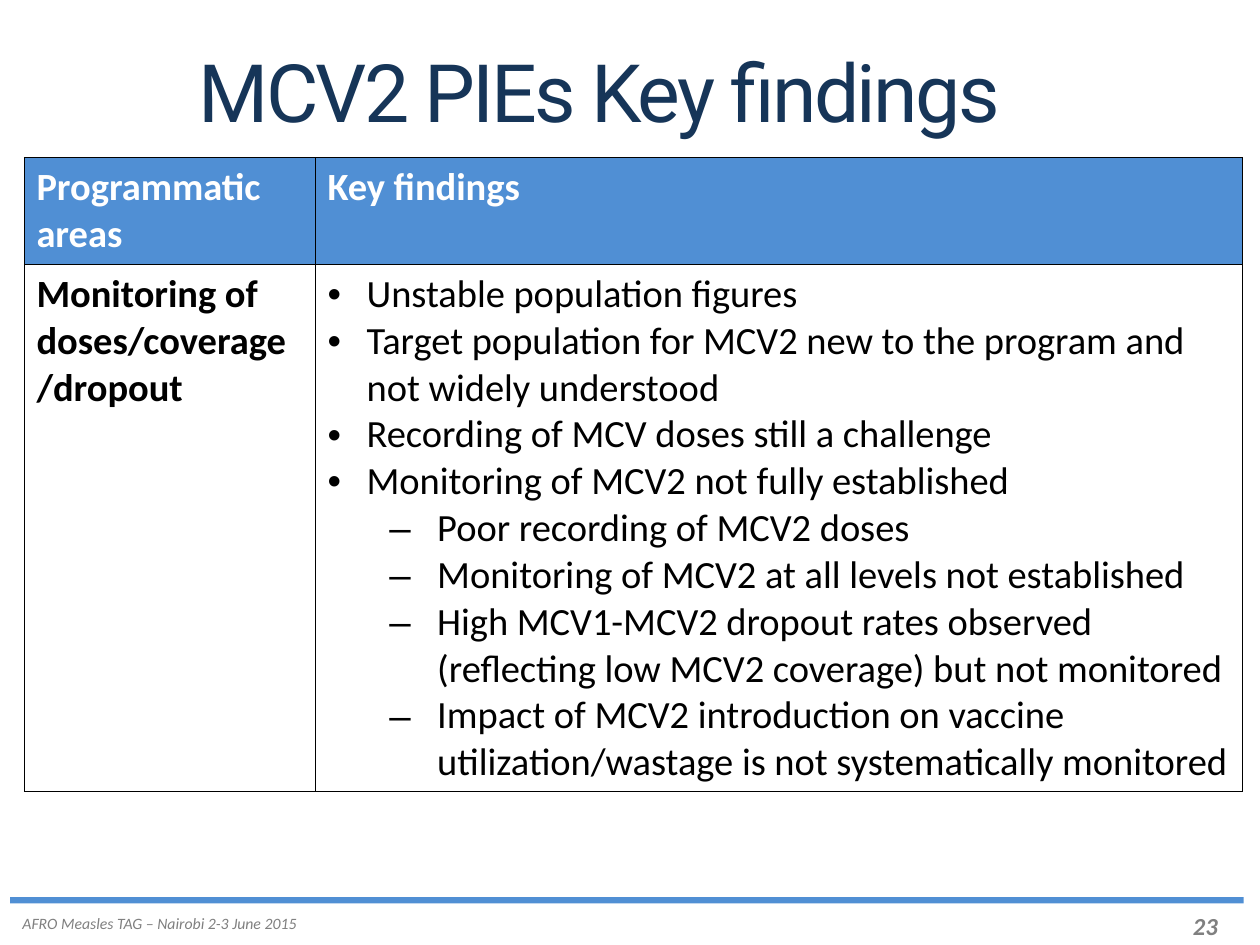
import pptx
import pptx.util
import pptx.dml.color
import pptx.enum.shapes
import pptx.enum.text
import pptx.oxml
import pptx.oxml.ns
from pptx.util import Inches

COLORS = {"blue": "508FD4", "navy": "163558", "grey": "808080",
          "white": "FFFFFF", "black": "000000"}

HEADERS = ["Programmatic areas", "Key findings"]
AREA = "Monitoring of doses/coverage/dropout"
FINDINGS = [
    (0, "Unstable population figures"),
    (0, "Target population for MCV2 new to the program and not widely understood"),
    (0, "Recording of MCV doses still a challenge"),
    (0, "Monitoring of MCV2 not fully established"),
    (1, "Poor recording of MCV2 doses"),
    (1, "Monitoring of MCV2 at all levels not established"),
    (1, "High MCV1-MCV2 dropout rates observed (reflecting low MCV2 coverage) but not monitored"),
    (1, "Impact of MCV2 introduction on vaccine utilization/wastage is not systematically monitored"),
]
BULLETS = [("•", 0.31, 0.31), ("‒", 0.87, 0.38)]


def rgb(name):
    """Return the named colour."""
    return pptx.dml.color.RGBColor.from_string(COLORS[name])


def add_run(p, text, size, color, bold=False, italic=False, font="Calibri"):
    """Add a formatted run to a paragraph."""
    r = p.add_run()
    r.text = text
    r.font.name = font
    r.font.size = pptx.util.Pt(size)
    r.font.bold = bold
    r.font.italic = italic
    r.font.color.rgb = rgb(color)
    return r


def add_title(s, text):
    """Place and fill the title placeholder."""
    sp = s.shapes.title
    sp.left, sp.top = Inches(0.17), Inches(0.42)
    sp.width, sp.height = Inches(9.17), Inches(0.72)
    tf = sp.text_frame
    tf.margin_left = tf.margin_right = tf.margin_top = tf.margin_bottom = 0
    tf.vertical_anchor = pptx.enum.text.MSO_ANCHOR.TOP
    tf.auto_size = pptx.enum.text.MSO_AUTO_SIZE.NONE
    p = tf.paragraphs[0]
    p.alignment = pptx.enum.text.PP_ALIGN.CENTER
    p.line_spacing = 0.9
    r = add_run(p, text, 46, "navy", font="Roboto")
    r._r.get_or_add_rPr().set("spc", "-150")


def add_footer_text(s, text, left, top, width, height, size, bold=False):
    """Add an italic grey footer text."""
    sp = s.shapes.add_textbox(Inches(left), Inches(top), Inches(width), Inches(height))
    tf = sp.text_frame
    tf.word_wrap = False
    add_run(tf.paragraphs[0], text, size, "grey", bold, italic=True)


def add_rule(s):
    """Add the blue bar above the footer."""
    sp = s.shapes.add_shape(pptx.enum.shapes.MSO_SHAPE.RECTANGLE,
                            Inches(0.08), Inches(7.12), Inches(9.79), Inches(0.05))
    sp.shadow.inherit = False
    sp.fill.solid()
    sp.fill.fore_color.rgb = rgb("blue")
    sp.line.fill.background()


def format_cell(cell, fill):
    """Fill a cell and give it thin black borders."""
    cell.fill.solid()
    cell.fill.fore_color.rgb = rgb(fill)
    tcPr = cell._tc.get_or_add_tcPr()
    for i, side in enumerate(("lnL", "lnR", "lnT", "lnB")):
        tcPr.insert(i, pptx.oxml.parse_xml(
            f'<a:{side} {pptx.oxml.ns.nsdecls("a")} w="3175"><a:solidFill>'
            f'<a:srgbClr val="{COLORS["black"]}"/></a:solidFill></a:{side}>'))


def add_bullet(p, level):
    """Give a paragraph the bullet and hanging indent of its level."""
    char, left, hang = BULLETS[level]
    p.level = level
    pPr = p._p.get_or_add_pPr()
    pPr.set("marL", str(Inches(left)))
    pPr.set("indent", str(-Inches(hang)))
    pPr.append(pptx.oxml.parse_xml(
        f'<a:buFont {pptx.oxml.ns.nsdecls("a")} typeface="Arial"/>'))
    pPr.append(pptx.oxml.parse_xml(
        f'<a:buChar {pptx.oxml.ns.nsdecls("a")} char="{char}"/>'))


def add_findings_table(s):
    """Add the table of programmatic areas and findings."""
    widths, heights = (2.31, 7.36), (0.85, 4.18)
    tbl = s.shapes.add_table(2, 2, Inches(0.19), Inches(1.25),
                             Inches(sum(widths)), Inches(sum(heights))).table
    for col, width in zip(tbl.columns, widths):
        col.width = Inches(width)
    for row, height, fill in zip(tbl.rows, heights, ("blue", "white")):
        row.height = Inches(height)
        for cell in row.cells:
            format_cell(cell, fill)
    for i, text in enumerate(HEADERS):
        add_run(tbl.cell(0, i).text_frame.paragraphs[0], text, 22, "white", True)
    add_run(tbl.cell(1, 0).text_frame.paragraphs[0], AREA, 22, "black", True)
    tf = tbl.cell(1, 1).text_frame
    for i, (level, text) in enumerate(FINDINGS):
        p = tf.add_paragraph() if i else tf.paragraphs[0]
        add_bullet(p, level)
        add_run(p, text, 22, "black")


def main():
    """Build the slide and save it."""
    prs = pptx.Presentation()
    prs.slide_width, prs.slide_height = Inches(10), Inches(7.5)
    s = prs.slides.add_slide(prs.slide_layouts[5])
    add_footer_text(s, "23", 9.37, 7.18, 0.44, 0.34, 14, bold=True)
    add_footer_text(s, "AFRO Measles TAG – Nairobi 2-3 June 2015", 0.08, 7.2, 2.4, 0.25, 9)
    add_rule(s)
    add_title(s, "MCV2 PIEs Key findings")
    add_findings_table(s)
    prs.save("out.pptx")


if __name__ == "__main__":
    main()
